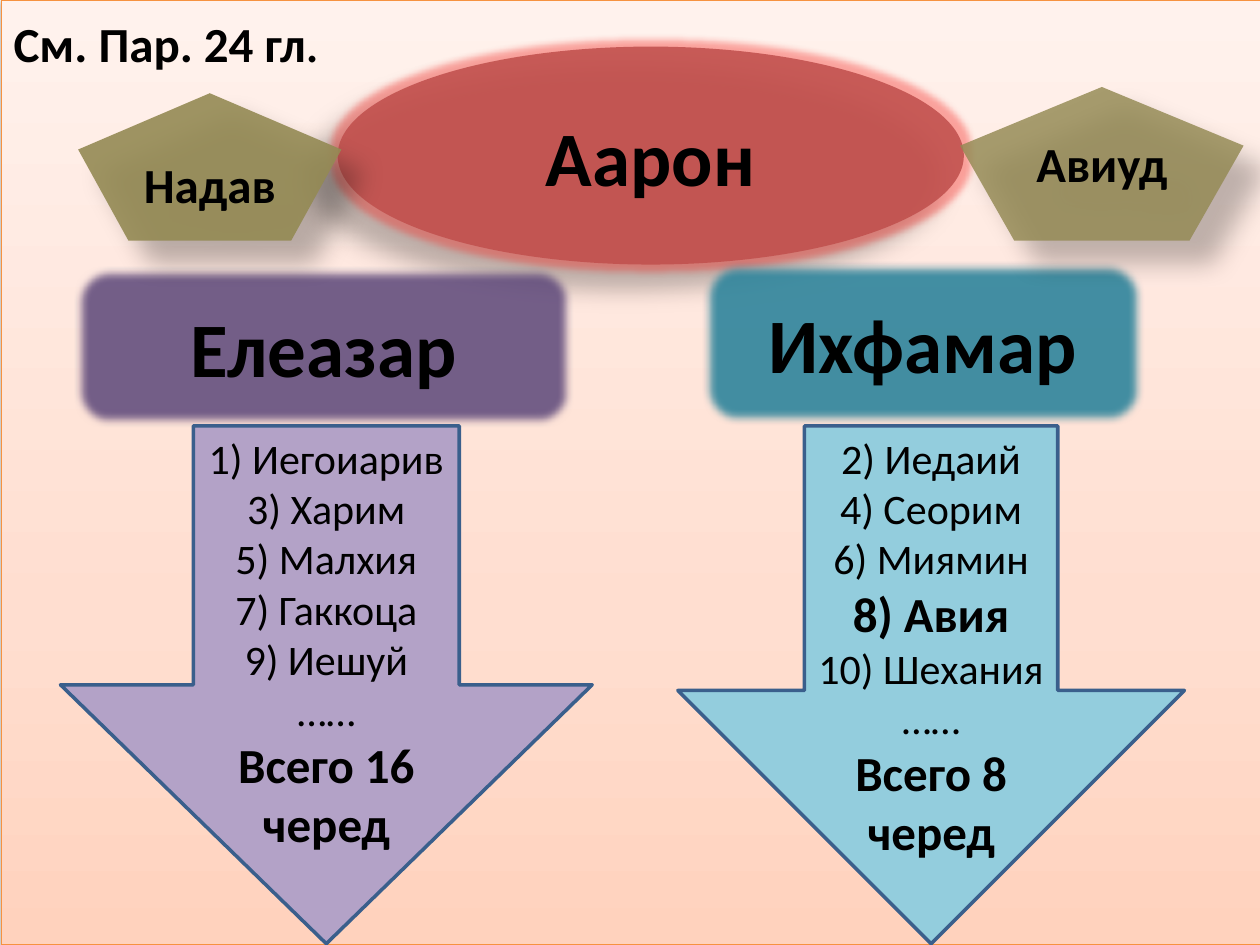
from lxml import etree
from pptx import Presentation, util as u
from pptx.dml.color import RGBColor
from pptx.enum import shapes, text
from pptx.oxml.ns import qn

COLS, ROWS = 100, 75
CELL = u.Inches(0.1)
G = shapes.MSO_SHAPE
C = {"ink": "000000", "edge": "3A5F8C", "frame": "F69240", "aaron": "C0504D",
     "glow": "F42F2A", "pentagon": "948A54", "eleazar": "604A7B",
     "ithamar": "31859C", "lilac": "B3A2C7", "aqua": "93CDDD",
     "bottom": "FFD2BD", "middle": "FFDED0", "top": "FFF2ED"}
NORMAL = {"size": u.Pt(24), "bold": False}
STRONG = {"size": u.Pt(28), "bold": True}
TITLE = {"size": u.Pt(44), "bold": True}
PENTAGON_SHADOW = (30, 15, 18, 45)


def add_color(parent, key, alpha=100):
    """Append a colour with an opacity percentage to an XML element."""
    clr = etree.SubElement(parent, qn("a:srgbClr"), val=C[key])
    if alpha < 100:
        etree.SubElement(clr, qn("a:alpha"), val=str(alpha * 1000))


def add_effects(sp, glow=None, shadow=None, soft=None):
    """Give a shape a glow, an outer shadow or soft edges."""
    sp.shadow.inherit = False
    lst = sp._element.spPr.find(qn("a:effectLst"))
    if glow:
        el = etree.SubElement(lst, qn("a:glow"), rad=str(u.Pt(glow)))
        add_color(el, "glow", 40)
    if shadow:
        alpha, blur, dist, angle = shadow
        el = etree.SubElement(lst, qn("a:outerShdw"), blurRad=str(u.Pt(blur)),
                              dist=str(u.Pt(dist)), dir=str(angle * 60000),
                              algn="tl", rotWithShape="0")
        add_color(el, "ink", alpha)
    if soft:
        etree.SubElement(lst, qn("a:softEdge"), rad=str(u.Pt(soft)))


def add_block(s, kind, box, fill=None, alpha=100, line=None, width=2, **effects):
    """Add a preset shape in a box of grid columns and rows."""
    sp = s.shapes.add_shape(kind, *(u.Emu(round(v * CELL)) for v in box))
    if fill:
        sp.fill.solid()
        sp.fill.fore_color.rgb = RGBColor.from_string(C[fill])
        if alpha < 100:
            clr = sp._element.spPr.find(qn("a:solidFill"))[0]
            etree.SubElement(clr, qn("a:alpha"), val=str(alpha * 1000))
    if line:
        sp.line.color.rgb = RGBColor.from_string(C[line])
        sp.line.width = u.Pt(width)
    else:
        sp.line.fill.background()
    add_effects(sp, **effects)
    return sp


def write(sp, lines, align=text.PP_ALIGN.CENTER, **frame):
    """Write paragraphs, each a list of (wording, font format) runs."""
    tf = sp.text_frame
    defaults = {"word_wrap": True, "vertical_anchor": text.MSO_ANCHOR.MIDDLE}
    for name, value in {**defaults, **frame}.items():
        setattr(tf, name, value)
    for i, runs in enumerate(lines):
        p = tf.paragraphs[0] if i == 0 else tf.add_paragraph()
        p.alignment = align
        for wording, fmt in runs:
            r = p.add_run()
            r.text = wording
            r.font.color.rgb = RGBColor.from_string(C["ink"])
            for name, value in {"name": "Calibri", **fmt}.items():
                setattr(r.font, name, value)


def backdrop(s, box):
    """Fill the box with the peach gradient and the reference note."""
    sp = add_block(s, G.RECTANGLE, box, line="frame", width=0.75,
                   shadow=(38, 3.1, 1.6, 90))
    sp.fill.gradient()
    grad = sp._element.spPr.find(qn("a:gradFill"))
    stops = grad.find(qn("a:gsLst"))
    for gs in list(stops):
        stops.remove(gs)
    for pos, key in ((0, "bottom"), (35, "middle"), (100, "top")):
        add_color(etree.SubElement(stops, qn("a:gs"), pos=str(pos * 1000)), key)
    sp.fill.gradient_angle = 90
    write(sp, [[("См. Пар. 24 гл", STRONG), (".", {"size": u.Pt(32), "bold": False})]],
          text.PP_ALIGN.LEFT, vertical_anchor=text.MSO_ANCHOR.TOP)
    sp.text_frame.paragraphs[0].space_before = u.Pt(2)


def father(s, box, name):
    """Place the glowing ellipse of the father."""
    sp = add_block(s, G.OVAL, box, "aaron", 87, glow=8, shadow=(28, 11.8, 19.7, 141))
    write(sp, [[(name, TITLE)]])


def lost_son(s, box, name, alpha, lift=0):
    """Place a pentagon, its name lifted by extra bottom margin."""
    sp = add_block(s, G.REGULAR_PENTAGON, box, "pentagon", alpha, shadow=PENTAGON_SHADOW)
    write(sp, [[(name, STRONG)]], margin_bottom=u.Inches(0.05 + lift))


def heir(s, box, name, fill, alpha):
    """Place the soft-edged plate of an heir."""
    sp = add_block(s, G.ROUNDED_RECTANGLE, box, fill, alpha, "edge", soft=5)
    write(sp, [[(name, TITLE)]])


def courses(s, box, fill, names, total, strong=()):
    """Place a down arrow listing the priestly courses and their total."""
    sp = add_block(s, G.DOWN_ARROW, box, fill, line="edge")
    lines = [[(n, STRONG if n in strong else NORMAL)] for n in names + ["……"]]
    write(sp, lines + [[(total, STRONG)]], vertical_anchor=text.MSO_ANCHOR.TOP,
          margin_left=u.Inches(0.08), margin_right=u.Inches(0.08))


def main():
    """Build the slide of Aaron's sons and save it."""
    prs = Presentation()
    prs.slide_width, prs.slide_height = COLS * CELL, ROWS * CELL
    s = prs.slides.add_slide(prs.slide_layouts[6])
    backdrop(s, (0.1, 0, COLS, ROWS))
    father(s, (26.8, 3.7, 49.7, 17.3), "Аарон")
    heir(s, (6, 21.2, 39.4, 12.6), "Елеазар", "eleazar", 87)
    heir(s, (55.8, 20.8, 34.9, 12.8), "Ихфамар", "ithamar", 91)
    lost_son(s, (6.2, 7.4, 20.9, 11.7), "Надав", 90)
    lost_son(s, (76.2, 6.9, 22.5, 12.2), "Авиуд", 83, lift=0.3)
    courses(s, (4.8, 33.8, 42.2, 41.1), "lilac",
            ["1) Иегоиарив", "3) Харим", "5) Малхия", "7) Гаккоца", "9) Иешуй"],
            "Всего 16 черед")
    courses(s, (53.8, 33.8, 40.2, 41.1), "aqua",
            ["2) Иедаий", "4) Сеорим", "6) Миямин", "8) Авия", "10) Шехания"],
            "Всего 8 черед", strong=("8) Авия",))
    prs.save("out.pptx")


if __name__ == "__main__":
    main()
